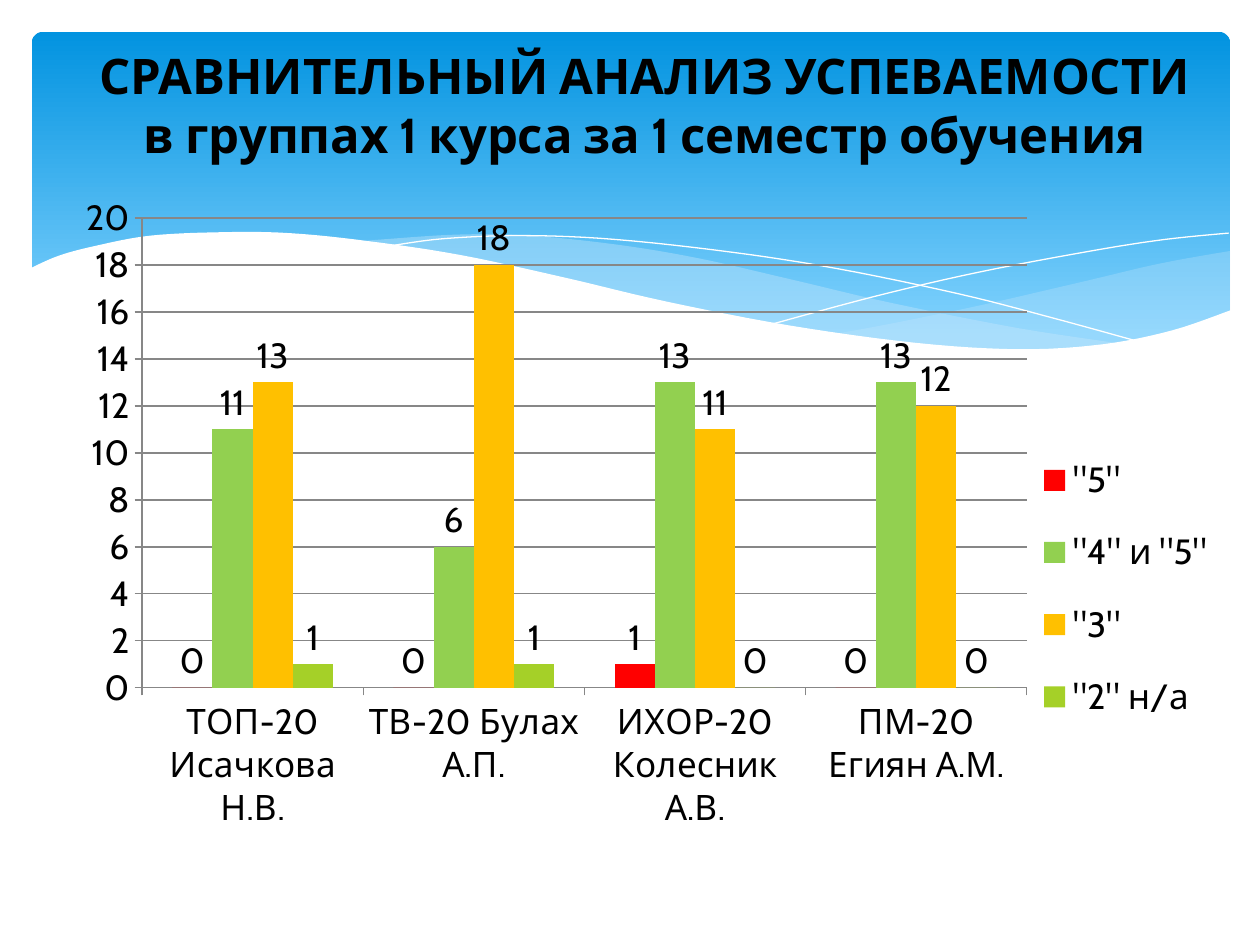
from lxml.etree import SubElement
from pptx import Presentation
from pptx.chart.data import CategoryChartData
from pptx.dml.color import RGBColor
from pptx.enum.chart import XL_CHART_TYPE, XL_LABEL_POSITION, XL_LEGEND_POSITION, XL_TICK_MARK
from pptx.enum.shapes import MSO_SHAPE
from pptx.enum.text import MSO_ANCHOR, PP_ALIGN
from pptx.oxml import parse_xml
from pptx.oxml.ns import nsdecls, qn
from pptx.util import Cm, Pt

FONT = "Cabin"

LOW = [
    [(24.16, 4.42), (22.76, 4.67), (21.23, 5.03), (19.15, 5.51), (17.3, 5.89), (16.15, 6.1)],
    [(16.15, 6.1), (17.27, 6.25), (18.59, 6.38), (20.04, 6.43), (21.51, 6.32),
     (22.76, 6.1), (24.16, 5.64)],
]
MID = [
    [(22.05, 6.3), (19.86, 5.97), (17.3, 5.46), (15.34, 5), (13.46, 4.57), (11.79, 4.29),
     (10.03, 4.11), (8.53, 4.09), (6.63, 4.22)],
    [(6.63, 4.22), (8.56, 4.52), (10.77, 5), (13.74, 5.66), (15.88, 6.07), (17.7, 6.32),
     (19.3, 6.43), (20.65, 6.43), (22.05, 6.3)],
]
FALL = [[(7.21, 4.32), (8.33, 4.17), (9.93, 4.11), (11.79, 4.19), (14.15, 4.45),
         (16.26, 4.78), (18.67, 5.28), (20.47, 5.74), (22.4, 6.27)]]
RISE = [[(14.94, 5.89), (17.02, 5.33), (19.08, 4.85), (21.36, 4.42), (22.83, 4.19), (24.13, 4.06)]]
FRONT = [
    [(24.18, 5.61), (22.99, 6.02), (21.59, 6.3), (19.91, 6.4), (17.81, 6.27), (15.27, 5.92),
     (12.8, 5.44), (10.72, 4.95), (8.64, 4.5), (6.78, 4.22), (5.21, 4.06), (3.86, 4.04),
     (2.39, 4.11), (1.27, 4.32), (0.53, 4.52), (-0.05, 4.78)],
    [(-0.05, 7.72), (24.18, 7.72)],
]

GROUPS = ["ТОП-20 Исачкова Н.В.", "ТВ-20 Булах А.П.", "ИХОР-20 Колесник А.В.", "ПМ-20 Егиян А.М."]
MARKS = [
    ('"5"', (0, 0, 1, 0), "FF0000"),
    ('"4" и "5"', (11, 6, 13, 13), "92D050"),
    ('"3"', (13, 18, 11, 12), "FFC000"),
    ('"2" н/а', (1, 1, 0, 0), "A5D028"),
]


def paint(form, color):
    if hasattr(form, "solid"):
        form.solid()
        form = form.fore_color
    form.rgb = RGBColor.from_string(color)


def smooth(knots, steps=6):
    ends = [knots[0], *knots, knots[-1]]
    dots = [knots[0]]
    for a, b, c, d in zip(ends, ends[1:], ends[2:], ends[3:]):
        for step in range(1, steps + 1):
            t = step / steps
            dots.append(tuple(
                (2 * q + (r - p) * t + (2 * p - 5 * q + 4 * r - s) * t ** 2
                 + (3 * q - p - 3 * r + s) * t ** 3) / 2
                for p, q, r, s in zip(a, b, c, d)))
    return dots


def add_wave(slide, left, top, curves, fill=None, alpha=None):
    dots = [(Cm(left + x), Cm(top + y)) for curve in curves for x, y in smooth(curve)]
    pen = slide.shapes.build_freeform(*dots[0])
    pen.add_line_segments(dots[1:], close=fill is not None)
    wave = pen.convert_to_shape()
    wave.shadow.inherit = False
    if fill:
        paint(wave.fill, fill)
        wave.line.fill.background()
    else:
        wave.fill.background()
        paint(wave.line.fill, "FFFFFF")
        wave.line.width = 0
    if alpha:
        tint = wave.fill._xPr.find(".//" + qn("a:srgbClr"))
        SubElement(tint, qn("a:alpha")).set("val", str(alpha * 1000))


def add_band(slide, left, top, width, height):
    band = slide.shapes.add_shape(
        MSO_SHAPE.ROUNDED_RECTANGLE, Cm(left), Cm(top), Cm(width), Cm(height))
    band.adjustments[0] = 0.034
    band.shadow.inherit = False
    band.line.fill.background()
    band.fill.gradient()
    band.fill.gradient_angle = 270
    for stop, place, color in zip(band.fill.gradient_stops, (0, 0.9), ("0293E0", "83D3FE")):
        stop.position = place
        paint(stop.color, color)
    add_wave(slide, left, top, LOW, "C6E7FC", 29)
    add_wave(slide, left, top, MID, "C6E7FC", 40)
    add_wave(slide, left, top, FALL)
    add_wave(slide, left, top, RISE)
    add_wave(slide, left, top, FRONT, "FFFFFF")


def add_title(slide, left, top, width, height):
    frame = slide.shapes.add_textbox(Cm(left), Cm(top), Cm(width), Cm(height)).text_frame
    frame.word_wrap = True
    frame.vertical_anchor = MSO_ANCHOR.MIDDLE
    frame.margin_bottom = Cm(1.22)
    line = frame.paragraphs[0]
    line.text = "СРАВНИТЕЛЬНЫЙ АНАЛИЗ УСПЕВАЕМОСТИ\vв группах 1 курса за 1 семестр обучения"
    line.alignment = PP_ALIGN.CENTER
    line.font.name = FONT
    line.font.size = Pt(28)
    line.font.bold = True
    paint(line.font.color, "000000")


def set_layout(chart, tag, inner, **sizes):
    spot = chart._chartSpace.find(".//" + qn(tag))
    for old in spot.getparent().findall(qn("c:layout")):
        old.getparent().remove(old)
    target = '<c:layoutTarget val="inner"/>' if inner else ""
    modes = "".join(f'<c:{key}Mode val="edge"/>' for key in "xy")
    parts = "".join(f'<c:{key} val="{size}"/>' for key, size in sizes.items())
    spot.addprevious(parse_xml(
        f'<c:layout {nsdecls("c")}><c:manualLayout>{target}{modes}{parts}'
        '</c:manualLayout></c:layout>'))


def add_marks(slide, left, top, width, height):
    data = CategoryChartData()
    data.categories = GROUPS
    for name, values, _ in MARKS:
        data.add_series(name, values)
    chart = slide.shapes.add_chart(
        XL_CHART_TYPE.COLUMN_CLUSTERED, Cm(left), Cm(top), Cm(width), Cm(height), data).chart
    chart.has_title = False
    chart.font.name = FONT
    chart.font.size = Pt(20)
    paint(chart.font.color, "000000")

    plot = chart.plots[0]
    plot.gap_width = 150
    plot.overlap = 0
    plot.vary_by_categories = False
    for series, (_, _, color) in zip(plot.series, MARKS):
        paint(series.format.fill, color)
        series.data_labels.show_value = True
        series.data_labels.position = XL_LABEL_POSITION.OUTSIDE_END

    scale = chart.value_axis
    scale.minimum_scale, scale.maximum_scale, scale.major_unit = 0, 20, 2
    scale.has_major_gridlines = True
    for axis in (scale, chart.category_axis):
        axis.major_tick_mark = XL_TICK_MARK.OUTSIDE
    for part in (scale, chart.category_axis, scale.major_gridlines):
        paint(part.format.line.fill, "878787")
        part.format.line.width = Pt(0.75)

    chart.has_legend = True
    chart.legend.position = XL_LEGEND_POSITION.RIGHT
    chart.legend.include_in_layout = False
    set_layout(chart, "c:barChart", True, x=0.07, y=0.05, w=0.76, h=0.71)
    set_layout(chart, "c:overlay", False, x=0.84, y=0.37, w=0.15, h=0.48)


def main():
    deck = Presentation()
    deck.slide_width, deck.slide_height = Cm(25.4), Cm(19.05)
    slide = deck.slides.add_slide(deck.slide_layouts[6])
    paint(slide.background.fill, "FFFFFF")
    add_band(slide, 0.64, 0.64, 24.16, 6.86)
    add_title(slide, 1.3, 0.91, 23.39, 3.48)
    add_marks(slide, 1.22, 3.73, 23.47, 13.34)
    deck.save("out.pptx")


if __name__ == "__main__":
    main()
